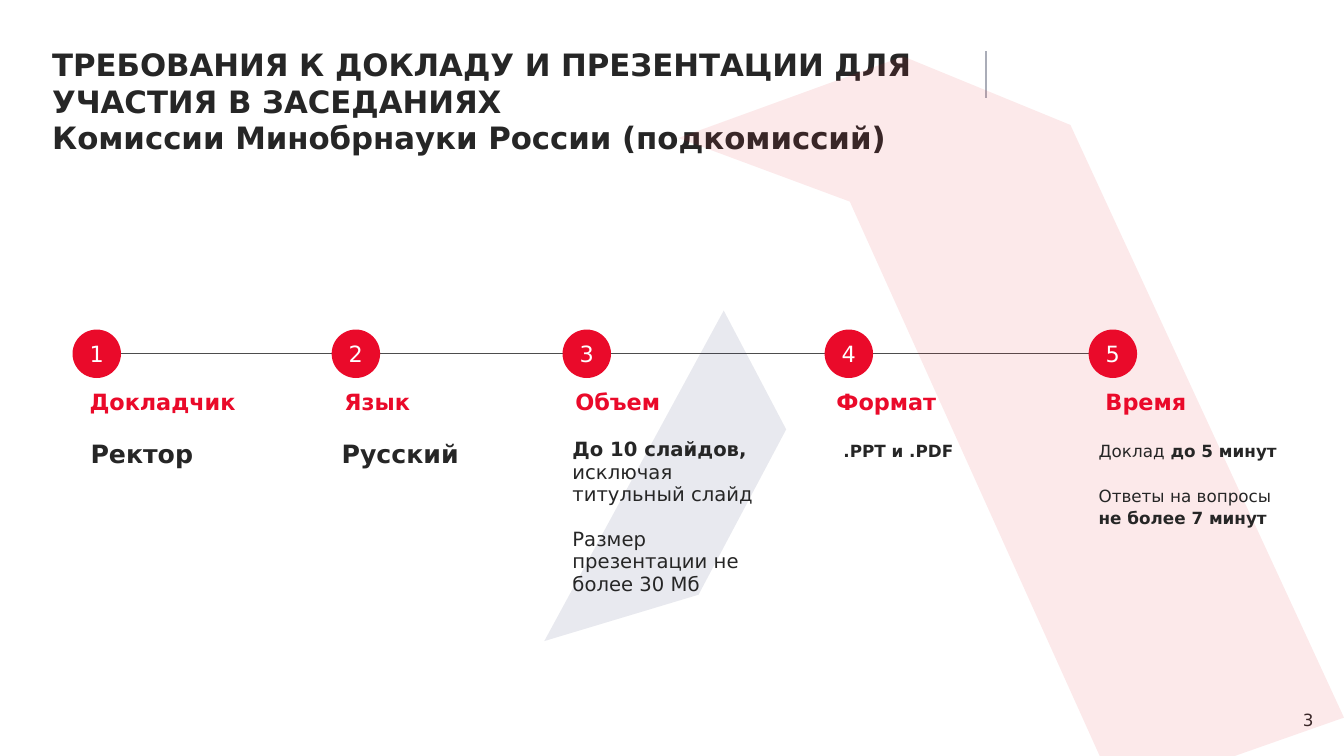
"""Build the slide with the five requirements for a talk and its presentation."""
from lxml import etree
from pptx import Presentation
from pptx.dml.color import RGBColor
from pptx.enum.shapes import MSO_CONNECTOR, MSO_SHAPE
from pptx.enum.text import MSO_ANCHOR, PP_ALIGN
from pptx.oxml.ns import qn
from pptx.util import Pt

CENTER, RIGHT = PP_ALIGN.CENTER, PP_ALIGN.RIGHT
MIDDLE = MSO_ANCHOR.MIDDLE
OVAL = MSO_SHAPE.OVAL
STRAIGHT = MSO_CONNECTOR.STRAIGHT

FONT = "DejaVu Sans"
COLORS = {"text": "262626", "red": "EA0A2A", "white": "FFFFFF", "axis": "4D4D4D",
          "divider": "AAADB8", "navy": "252E63", "rose": "E62E39"}
TITLE = [[("ТРЕБОВАНИЯ К ДОКЛАДУ И ПРЕЗЕНТАЦИИ ДЛЯ УЧАСТИЯ В ЗАСЕДАНИЯХ", True)],
         [("Комиссии Минобрнауки России (подкомиссий)", True)]]
PAGE_NUMBER = "3"
TIGHT = {"line_spacing": 0.9}
BODY = {"line_spacing": Pt(16)}
GAP = {"line_spacing": Pt(16), "space_before": Pt(16)}
STEPS = [
    {"name": "Докладчик", "circle": 51.8, "label": 56.9, "body": 57.6, "width": 110.9,
     "size": 18, "lines": [([("Ректор", True)], {})]},
    {"name": "Язык", "circle": 236.9, "label": 239, "body": 236.9, "width": 142.6,
     "size": 18, "lines": [([("Русский", True)], {})]},
    {"name": "Объем", "circle": 401.8, "label": 403.9, "body": 401.8, "width": 160.6,
     "size": 14, "lines": [
         ([("До 10 слайдов, ", True), ("исключая титульный слайд", False)], BODY),
         ([("Размер презентации не более 30 Мб", False)], GAP)]},
    {"name": "Формат", "circle": 589, "label": 590.4, "body": 595.4, "width": 158.4,
     "size": 12, "lines": [([(".PPT и .PDF", True)], BODY)]},
    {"name": "Время", "circle": 777.6, "label": 782.6, "body": 777.6, "width": 164.9,
     "size": 12, "lines": [
         ([("Доклад", False), (" до 5 минут", True)], BODY),
         ([("Ответы на вопросы", False)], GAP),
         ([("не более 7 минут", True)], BODY)]},
]
LINES = [("axis", 69.1, 252.7, 796.3, 252.7), ("divider", 704.2, 36.7, 704.2, 69.8)]
POLYGONS = [
    ("navy", [(517, 221.8), (388.8, 457.9), (499, 424.8), (561.6, 306.7)]),
    ("rose", [(960, 512.6), (764.6, 89.3), (645.1, 40.3), (484.6, 98.6),
              (607, 144), (785.5, 540), (882, 540)]),
]
CIRCLE_TOP, CIRCLE_SIZE = 235.4, 34.6
LABEL_TOP, LABEL_WIDTH, LABEL_HEIGHT = 275.8, 150, 25.2
BODY_TOP, BODY_HEIGHT = 309.6, 74.2


def color(name):
    return RGBColor.from_string(COLORS[name])


def apply(target, values):
    for name, value in values.items():
        setattr(target, name, value)


def write(frame, lines, size, ink="text"):
    frame.word_wrap = True
    for index, (spans, values) in enumerate(lines):
        para = frame.add_paragraph() if index else frame.paragraphs[0]
        apply(para, values)
        for text, bold in spans:
            span = para.add_run()
            span.text = text
            apply(span.font, {"name": FONT, "size": Pt(size), "bold": bold})
            span.font.color.rgb = color(ink)


def add_text(page, place, lines, size, ink="text"):
    box = page.shapes.add_textbox(*map(Pt, place))
    write(box.text_frame, lines, size, ink)


def paint(shape, fill):
    shape.shadow.inherit = False
    shape.fill.solid()
    shape.fill.fore_color.rgb = color(fill)
    shape.line.fill.background()


def add_line(page, ink, *ends):
    line = page.shapes.add_connector(STRAIGHT, *map(Pt, ends))
    line.line.color.rgb = color(ink)
    line.line.width = Pt(1)
    etree.SubElement(line._element.spPr, qn("a:effectLst"))


def add_polygon(page, fill, points):
    corners = [(Pt(x), Pt(y)) for x, y in points]
    builder = page.shapes.build_freeform(*corners[0])
    builder.add_line_segments(corners[1:], close=True)
    shape = builder.convert_to_shape()
    paint(shape, fill)
    tint = shape._element.spPr.find(f"{qn('a:solidFill')}/{qn('a:srgbClr')}")
    etree.SubElement(tint, qn("a:alpha"), val="10000")


def add_step(page, number, step):
    circle = page.shapes.add_shape(OVAL, Pt(step["circle"]), Pt(CIRCLE_TOP),
                                   Pt(CIRCLE_SIZE), Pt(CIRCLE_SIZE))
    paint(circle, "red")
    apply(circle.text_frame, {"margin_left": 0, "margin_right": 0, "margin_top": 0,
                              "margin_bottom": 0, "vertical_anchor": MIDDLE})
    write(circle.text_frame, [([(str(number), False)], {"alignment": CENTER})], 16, "white")
    add_text(page, (step["label"], LABEL_TOP, LABEL_WIDTH, LABEL_HEIGHT),
             [([(step["name"], True)], TIGHT)], 16, "red")
    add_text(page, (step["body"], BODY_TOP, step["width"], BODY_HEIGHT),
             step["lines"], step["size"])


def main():
    deck = Presentation()
    apply(deck, {"slide_width": Pt(960), "slide_height": Pt(540)})
    page = deck.slides.add_slide(deck.slide_layouts[6])
    add_text(page, (30.2, 28.8, 665.3, 63.4), [(spans, {}) for spans in TITLE], 22)
    add_text(page, (877.7, 504.7, 67.7, 25.9),
             [([(PAGE_NUMBER, False)], {"alignment": RIGHT, **TIGHT})], 12)
    for line in LINES:
        add_line(page, *line)
    for polygon in POLYGONS:
        add_polygon(page, *polygon)
    for number, step in enumerate(STEPS, 1):
        add_step(page, number, step)
    deck.save("out.pptx")


if __name__ == "__main__":
    main()
